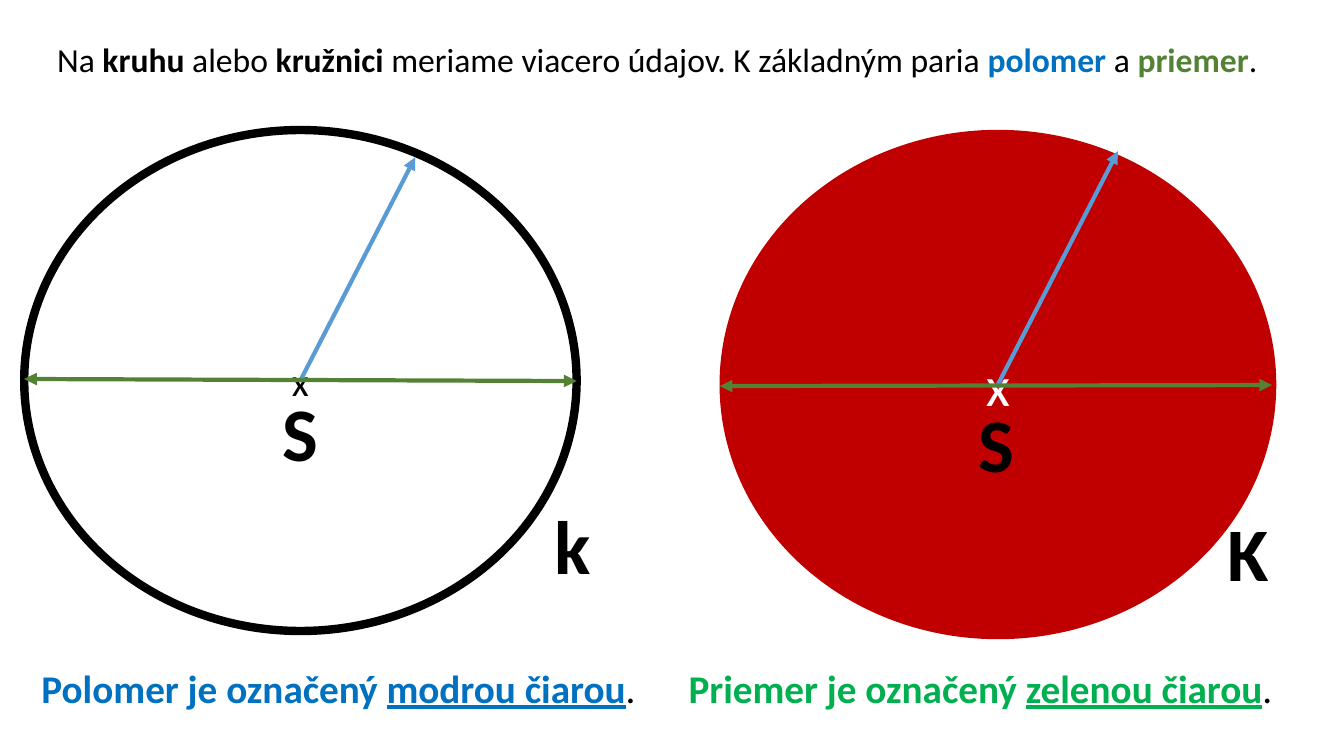
import dataclasses
import typing

import lxml.etree
import pptx
import pptx.dml.color
import pptx.enum.shapes
import pptx.enum.text
import pptx.oxml.ns
import pptx.util

SLIDE_WIDTH = pptx.util.Inches(13.333)
SLIDE_HEIGHT = pptx.util.Inches(7.5)
COLUMN = SLIDE_WIDTH / 40
ROW = SLIDE_HEIGHT / 30

FONT = "Calibri"
BLACK = "000000"
WHITE = "FFFFFF"
RED = "C00000"
BLUE = "0070C0"
GREEN = "00B050"
DARK_GREEN = "548235"
RADIUS_BLUE = "5B9BD5"
CENTER = pptx.enum.text.PP_ALIGN.CENTER
LEFT = pptx.enum.text.PP_ALIGN.LEFT


class Point(typing.NamedTuple):
    column: float
    row: float


class Run(typing.NamedTuple):
    text: str
    color: str = BLACK
    bold: bool = False
    underline: bool = False


@dataclasses.dataclass(frozen=True)
class Caption:
    position: Point
    columns: float
    size: int
    alignment: pptx.enum.text.PP_ALIGN
    runs: tuple[Run, ...]


@dataclasses.dataclass(frozen=True)
class Label:
    text: str
    top_center: Point


@dataclasses.dataclass(frozen=True)
class Circle:
    center: Point
    columns: float
    fill: str
    outline: str
    mark_color: str
    mark_size: int
    radius_end: Point
    diameter_start: Point
    diameter_end: Point
    labels: tuple[Label, ...]


CAPTIONS = (
    Caption(Point(0, 1.36), 39.12, 24, CENTER, (
        Run("Na "),
        Run("kruhu", bold=True),
        Run(" alebo "),
        Run("kružnici", bold=True),
        Run(" meriame viacero údajov. K základným paria "),
        Run("polomer", BLUE, bold=True),
        Run(" a "),
        Run("priemer", DARK_GREEN, bold=True),
        Run("."),
    )),
    Caption(Point(0.94, 26.16), 19, 28, LEFT, (
        Run("Polomer je označený ", BLUE, bold=True),
        Run("modrou čiarou", BLUE, bold=True, underline=True),
        Run("."),
    )),
    Caption(Point(20.2, 26.16), 19, 28, LEFT, (
        Run("Priemer je označený ", GREEN, bold=True),
        Run("zelenou čiarou", GREEN, bold=True, underline=True),
        Run("."),
    )),
)

CIRCLES = (
    Circle(
        Point(8.94, 15.1), 16.44, WHITE, BLACK, BLACK, 28,
        Point(12.36, 6.24), Point(0.72, 15.04), Point(17.16, 15.12),
        (Label("S", Point(8.94, 15.12)), Label("k", Point(17.04, 19.6))),
    ),
    Circle(
        Point(29.7, 15.26), 16.32, RED, RED, WHITE, 40,
        Point(33.27, 6), Point(21.42, 15.32), Point(37.86, 15.28),
        (Label("S", Point(29.66, 15.56)), Label("K", Point(37.14, 19.88))),
    ),
)
CIRCLE_ROWS = 19.88
LABEL_COLUMNS = 1.86
LABEL_ROWS = 4.04


def across(columns: float) -> int:
    """Turn grid columns into a length."""
    return round(columns * COLUMN)


def down(rows: float) -> int:
    """Turn grid rows into a length."""
    return round(rows * ROW)


def rgb(value: str) -> pptx.dml.color.RGBColor:
    """Turn a hex string into a colour."""
    return pptx.dml.color.RGBColor.from_string(value)


def add_text(paragraph, text: str, *, size: int, color: str = BLACK,
             bold: bool = False, underline: bool = False) -> None:
    """Append a formatted run to a paragraph."""
    run = paragraph.add_run()
    run.text = text
    run.font.name = FONT
    run.font.size = pptx.util.Pt(size)
    run.font.bold = bold
    run.font.underline = underline
    run.font.color.rgb = rgb(color)


def draw_caption(slide, caption: Caption) -> None:
    """Draw one line of running text."""
    box = slide.shapes.add_textbox(
        across(caption.position.column), down(caption.position.row),
        across(caption.columns), down(2.4))
    box.text_frame.word_wrap = True
    paragraph = box.text_frame.paragraphs[0]
    paragraph.alignment = caption.alignment
    for run in caption.runs:
        add_text(paragraph, run.text, size=caption.size, color=run.color,
                 bold=run.bold, underline=run.underline)


def draw_label(slide, label: Label) -> None:
    """Draw a large letter centred below a point."""
    box = slide.shapes.add_textbox(
        across(label.top_center.column - LABEL_COLUMNS / 2),
        down(label.top_center.row), across(LABEL_COLUMNS), down(LABEL_ROWS))
    box.text_frame.word_wrap = False
    paragraph = box.text_frame.paragraphs[0]
    paragraph.alignment = CENTER
    add_text(paragraph, label.text, size=54, bold=True)


def draw_arrow(slide, start: Point, end: Point, color: str, ends: tuple[str, ...]) -> None:
    """Draw a straight line with triangles at the named ends."""
    arrow = slide.shapes.add_connector(
        pptx.enum.shapes.MSO_CONNECTOR.STRAIGHT,
        across(start.column), down(start.row), across(end.column), down(end.row))
    arrow.line.color.rgb = rgb(color)
    arrow.line.width = pptx.util.Pt(3)
    line = arrow.line._get_or_add_ln()
    for end_name in ends:
        lxml.etree.SubElement(line, pptx.oxml.ns.qn(f"a:{end_name}"), type="triangle")
    lxml.etree.SubElement(arrow._element.spPr, pptx.oxml.ns.qn("a:effectLst"))


def draw_circle(slide, circle: Circle) -> None:
    """Draw a circle with its centre mark, radius, diameter and labels."""
    shape = slide.shapes.add_shape(
        pptx.enum.shapes.MSO_SHAPE.OVAL,
        across(circle.center.column - circle.columns / 2),
        down(circle.center.row - CIRCLE_ROWS / 2),
        across(circle.columns), down(CIRCLE_ROWS))
    shape.shadow.inherit = False
    shape.fill.solid()
    shape.fill.fore_color.rgb = rgb(circle.fill)
    shape.line.color.rgb = rgb(circle.outline)
    shape.line.width = pptx.util.Pt(6)
    shape.text_frame.vertical_anchor = pptx.enum.text.MSO_ANCHOR.MIDDLE
    paragraph = shape.text_frame.paragraphs[0]
    paragraph.alignment = CENTER
    add_text(paragraph, "x", size=circle.mark_size, color=circle.mark_color)
    for label in circle.labels:
        draw_label(slide, label)
    draw_arrow(slide, circle.center, circle.radius_end, RADIUS_BLUE, ("tailEnd",))
    draw_arrow(slide, circle.diameter_start, circle.diameter_end, DARK_GREEN,
               ("headEnd", "tailEnd"))


def main() -> None:
    """Build the slide and save it."""
    presentation = pptx.Presentation()
    presentation.slide_width = SLIDE_WIDTH
    presentation.slide_height = SLIDE_HEIGHT
    slide = presentation.slides.add_slide(presentation.slide_layouts[6])
    for caption in CAPTIONS:
        draw_caption(slide, caption)
    for circle in CIRCLES:
        draw_circle(slide, circle)
    presentation.save("out.pptx")


if __name__ == "__main__":
    main()
